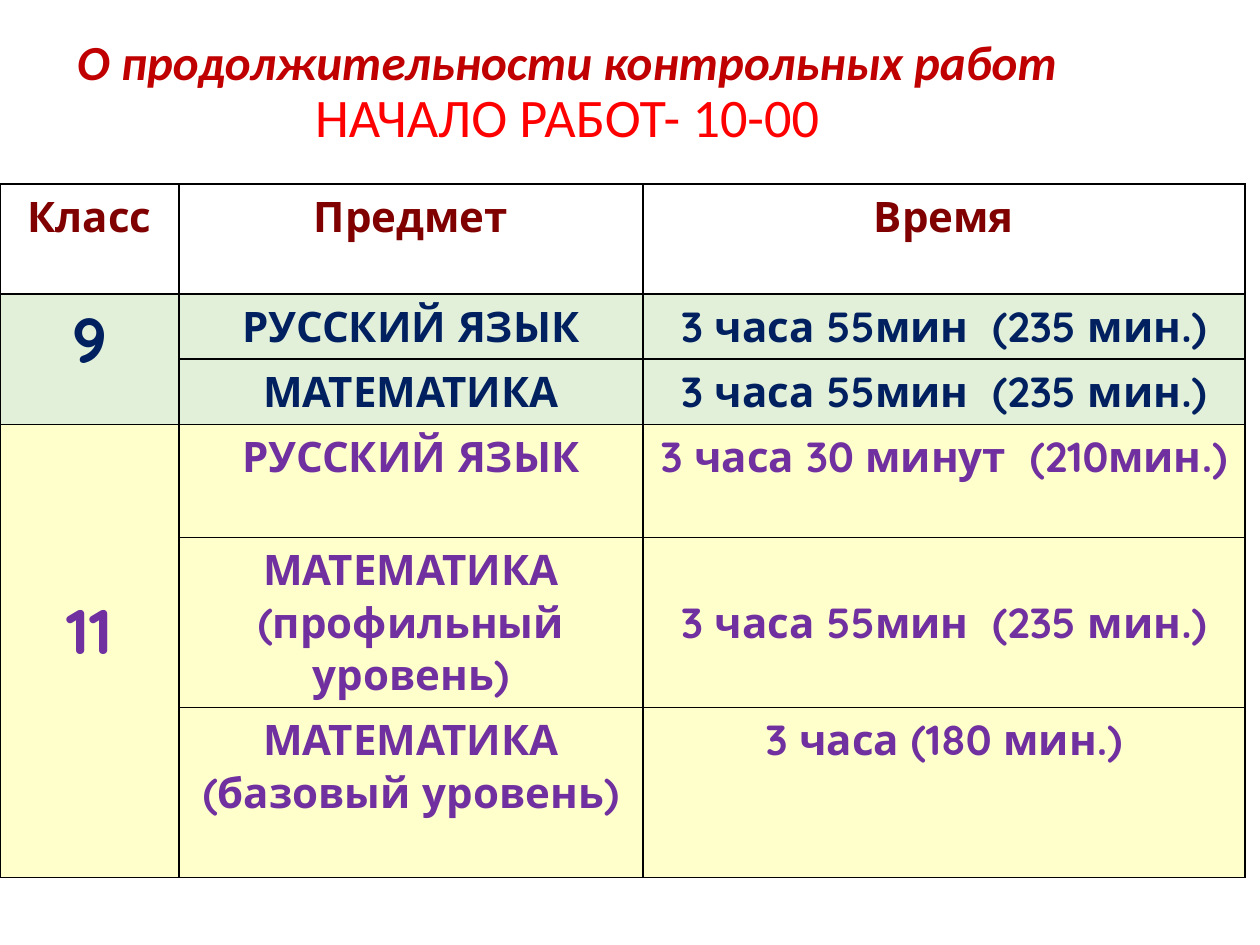
from pptx import Presentation
from pptx.dml.color import RGBColor
from pptx.enum.text import MSO_ANCHOR, MSO_AUTO_SIZE, PP_ALIGN
from pptx.oxml import parse_xml
from pptx.oxml.ns import nsdecls
from pptx.util import Pt

NAVY, PLUM, WINE = "002060", "7030A0", "800000"
MINT, CREAM, WHITE = "E2F0D9", "FFFFCC", "FFFFFF"
LONG = "3 часа 55мин  (235 мин.)"
COLS = [179, 464, 602]
ROWS = [
    (110, WINE, WHITE, ["Класс", "Предмет", "Время"]),
    (65, NAVY, MINT, ["9", "РУССКИЙ ЯЗЫК", LONG]),
    (65, NAVY, MINT, ["", "МАТЕМАТИКА", LONG]),
    (113, PLUM, CREAM, ["11", "РУССКИЙ ЯЗЫК", "3 часа 30 минут  (210мин.)"]),
    (170, PLUM, CREAM, ["", "МАТЕМАТИКА\n(профильный уровень)", LONG]),
    (170, PLUM, CREAM, ["", "МАТЕМАТИКА\n(базовый уровень)", "3 часа (180 мин.)"]),
]


def px(count):
    return round(count * 914400 / 126)


def color(code):
    return RGBColor.from_string(code)


class Deck:
    face = "Quicksand"
    edge = "000000"

    def __init__(self):
        self.file = Presentation()
        self.file.slide_width = px(1260)
        self.file.slide_height = px(945)
        self.slide = self.file.slides.add_slide(self.file.slide_layouts[5])

    def style(self, para, face, size, tint, bold=True, slant=False):
        para.alignment = PP_ALIGN.CENTER
        for run in para.runs:
            font = run.font
            font.name = face
            font.size = Pt(size)
            font.bold = bold
            font.italic = slant
            font.color.rgb = color(tint)

    def title(self, box, lines):
        shape = self.slide.shapes.title
        shape.left, shape.top, shape.width, shape.height = map(px, box)
        frame = shape.text_frame
        frame.text = "\n".join(text for text, *_ in lines)
        frame.word_wrap = True
        frame.auto_size = MSO_AUTO_SIZE.NONE
        frame.vertical_anchor = MSO_ANCHOR.MIDDLE
        for para, (_, *look) in zip(frame.paragraphs, lines):
            self.style(para, "Calibri", *look)
            para.line_spacing = 0.9
            para.space_before = Pt(0)

    def border(self, cell):
        props = cell._tc.get_or_add_tcPr()
        for spot, side in enumerate(("lnL", "lnR", "lnT", "lnB")):
            props.insert(spot, parse_xml(
                f'<a:{side} {nsdecls("a")} w="{Pt(1)}"><a:solidFill>'
                f'<a:srgbClr val="{self.edge}"/></a:solidFill></a:{side}>'))

    def cell(self, cell, text, size, tint, fill):
        cell.fill.solid()
        cell.fill.fore_color.rgb = color(fill)
        self.border(cell)
        cell.text_frame.text = text
        for para in cell.text_frame.paragraphs:
            self.style(para, self.face, size, tint)

    def table(self, left, top, cols, rows):
        high = sum(row[0] for row in rows)
        grid = self.slide.shapes.add_table(
            len(rows), len(cols), px(left), px(top), px(sum(cols)), px(high)).table
        for col, wide in zip(grid.columns, cols):
            col.width = px(wide)
        for y, (tall, tint, fill, texts) in enumerate(rows):
            grid.rows[y].height = px(tall)
            for x, text in enumerate(texts):
                size = 36 if y and x == 0 else 24
                self.cell(grid.cell(y, x), text, size, tint, fill)
        return grid


def main():
    deck = Deck()
    deck.title((0, 26, 1134, 135), [
        ("О продолжительности контрольных работ", 28, "C00000", True, True),
        ("НАЧАЛО РАБОТ- 10-00", 31, "FF0000", False, False),
    ])
    grid = deck.table(0, 184, COLS, ROWS)
    for first, last in ((1, 2), (3, 5)):
        grid.cell(first, 0).merge(grid.cell(last, 0))
    for y, x in ((3, 0), (4, 2)):
        grid.cell(y, x).vertical_anchor = MSO_ANCHOR.MIDDLE
    grid.cell(3, 0).margin_bottom = px(46)
    deck.file.save("out.pptx")


if __name__ == "__main__":
    main()
